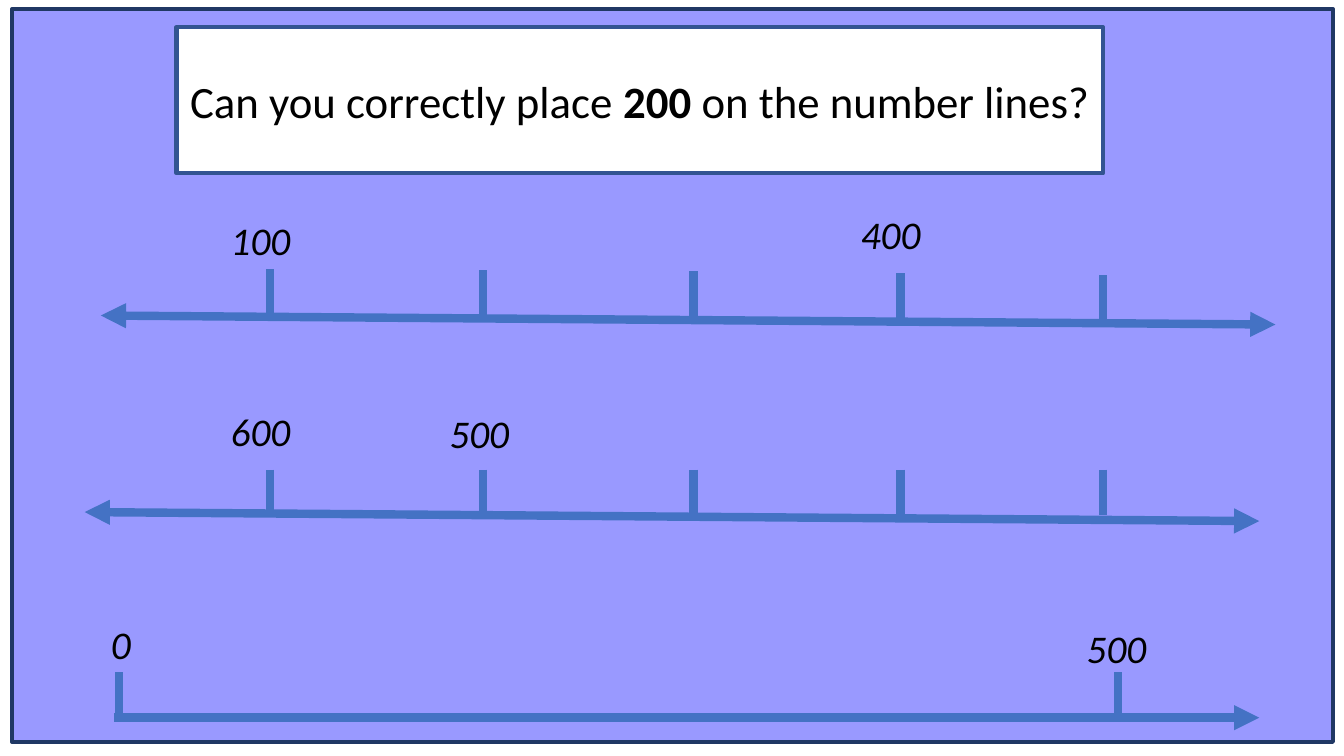
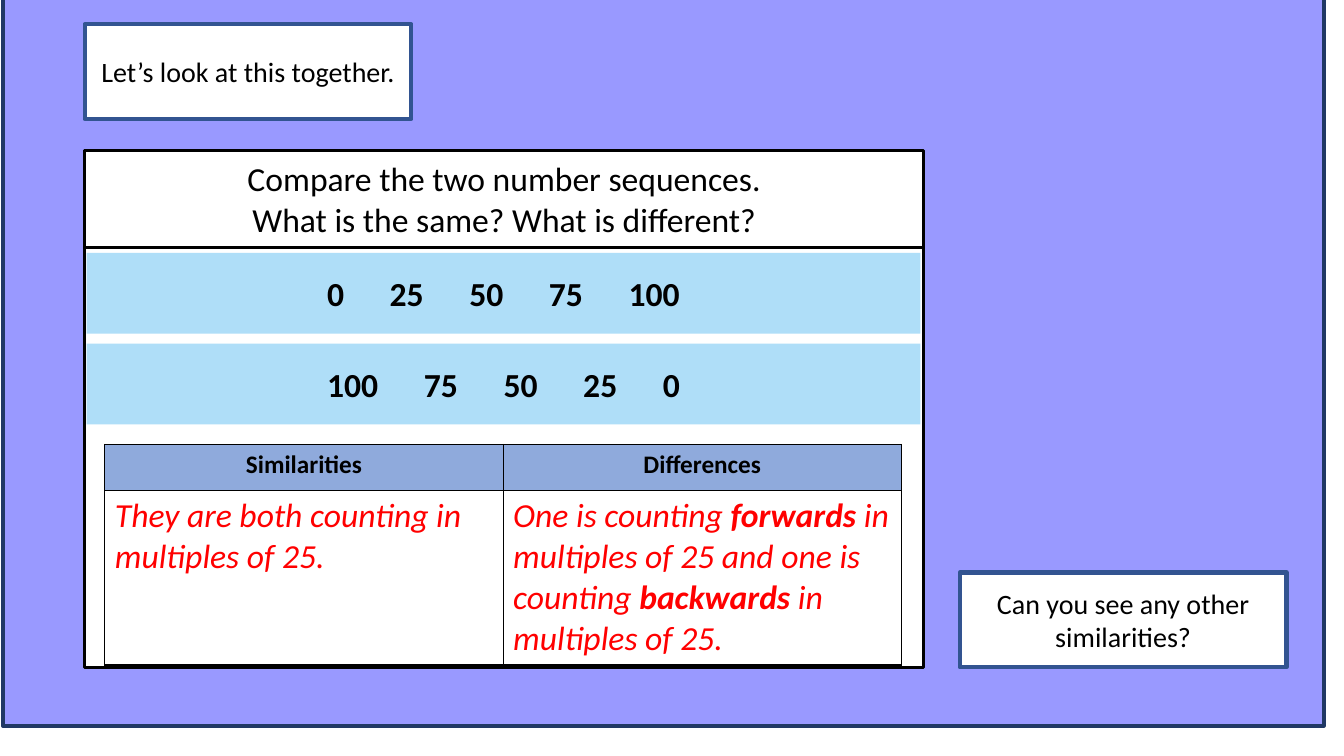
from lxml import etree
from pptx import Presentation
from pptx.dml.color import RGBColor
from pptx.enum.shapes import MSO_CONNECTOR, MSO_SHAPE
from pptx.enum.text import MSO_ANCHOR, PP_ALIGN
from pptx.oxml.ns import qn
from pptx.util import Inches, Pt

RECT = MSO_SHAPE.RECTANGLE
STRAIGHT = MSO_CONNECTOR.STRAIGHT
LEFT, CENTER = PP_ALIGN.LEFT, PP_ALIGN.CENTER
TOP, MIDDLE = MSO_ANCHOR.TOP, MSO_ANCHOR.MIDDLE

FONT = "Calibri"
COLORS = {
    "panel": "9999FF", "panel_edge": "203864", "box_edge": "325491",
    "axis": "4472C4", "band": "AFDEF8", "header": "8FAADC",
    "white": "FFFFFF", "black": "000000", "answer": "FF0000",
}

QUESTION = [("Can you correctly place ", False), ("200 ", True),
            ("on the number lines?", False)]
TICK_XS = [2.68, 4.79, 6.88, 8.93, 10.94]
TICK_HEIGHT = 0.45
NUMBER_LINES = [
    {"axis": (1, 3.13, 12.65, 3.22), "both_ends": True,
     "ticks": list(zip(TICK_XS, [2.67, 2.68, 2.69, 2.71, 2.73])),
     "labels": [("100", 2.19, 2.1), ("400", 8.44, 2.04)]},
    {"axis": (0.84, 5.08, 12.49, 5.17), "both_ends": True,
     "ticks": [(x, 4.66) for x in TICK_XS],
     "labels": [("600", 2.19, 3.99), ("500", 4.36, 4.01)]},
    {"axis": (1.13, 7.12, 12.49, 7.12), "both_ends": False,
     "ticks": [(1.18, 6.67), (11.09, 6.67)],
     "labels": [("0", 1, 6.1), ("500", 10.68, 6.14)]},
]

PROMPTS = [("Let’s look at this together.", 0.84, 0.24),
           ("Can you see any other similarities?", 9.52, 5.68)]
TASK = ["Compare the two number sequences.",
        "What is the same? What is different?"]
SEQUENCES = [["0", "25", "50", "75", "100"], ["100", "75", "50", "25", "0"]]
BAND_LEFT, BAND_TOP, BAND_WIDTH, BAND_HEIGHT, BAND_STEP = 0.86, 2.51, 8.27, 0.8, 0.9
DIGIT_WIDTH, NUMBER_GAP = 0.17, 0.45
HEADERS = ["Similarities", "Differences"]
ANSWERS = [
    [("They are both counting in multiples of 25.", False)],
    [("One is counting ", False), ("forwards", True),
     (" in multiples of 25 and one is counting ", False),
     ("backwards", True), (" in multiples of 25.", False)],
]
TABLE_AT = (1.04, 4.41, 7.9, 2.16)
ROW_HEIGHTS = [0.46, 1.7]


def rgb(name):
    return RGBColor.from_string(COLORS[name])


def write(tf, paragraphs, size, color="black", align=CENTER, bold=False, italic=False):
    for i, runs in enumerate(paragraphs):
        p = tf.add_paragraph() if i else tf.paragraphs[0]
        p.alignment = align
        p.font.name = FONT
        p.font.size = Pt(size)
        p.font.italic = italic
        p.font.bold = bold
        p.font.color.rgb = rgb(color)
        for text, strong in runs:
            r = p.add_run()
            r.text = text
            if strong:
                r.font.bold = True


def plain(text):
    return [(text, False)]


def add_box(s, at, fill="white", edge=None, width=3, anchor=MIDDLE):
    sp = s.shapes.add_shape(RECT, *map(Inches, at))
    sp.shadow.inherit = False
    sp.fill.solid()
    sp.fill.fore_color.rgb = rgb(fill)
    if edge:
        sp.line.color.rgb = rgb(edge)
        sp.line.width = Pt(width)
    else:
        sp.line.fill.background()
    sp.text_frame.word_wrap = True
    sp.text_frame.vertical_anchor = anchor
    return sp


def add_panel(prs, left, top):
    s = prs.slides.add_slide(prs.slide_layouts[6])
    add_box(s, (left, top, 13.1, 7.27), "panel", "panel_edge")
    return s


def add_line(s, ends, arrows=()):
    sp = s.shapes.add_connector(STRAIGHT, *map(Inches, ends))
    sp.line.color.rgb = rgb("axis")
    sp.line.width = Pt(6)
    for end in arrows:
        etree.SubElement(sp.line._get_or_add_ln(), qn("a:" + end), type="triangle")
    etree.SubElement(sp._element.spPr, qn("a:effectLst"))


def add_number_line(s, axis, both_ends, ticks, labels):
    for x, y in ticks:
        add_line(s, (x, y, x, y + TICK_HEIGHT))
    for text, x, y in labels:
        tf = s.shapes.add_textbox(*map(Inches, (x, y, 1.81, 0.57))).text_frame
        tf.word_wrap = True
        write(tf, [plain(text)], 28, align=LEFT, italic=True)
    add_line(s, axis, ("headEnd", "tailEnd") if both_ends else ("tailEnd",))


def add_sequence(s, numbers, top):
    sp = add_box(s, (BAND_LEFT, top, BAND_WIDTH, BAND_HEIGHT), "band")
    tf = sp.text_frame
    total = sum(map(len, numbers)) * DIGIT_WIDTH + NUMBER_GAP * (len(numbers) - 1)
    tf.margin_left = Inches((BAND_WIDTH - total) / 2)
    write(tf, [plain("\t".join(numbers))], 24, align=LEFT, bold=True)
    tabs = etree.Element(qn("a:tabLst"))
    x = 0
    for number in numbers[:-1]:
        x += len(number) * DIGIT_WIDTH + NUMBER_GAP
        etree.SubElement(tabs, qn("a:tab"), pos=str(Inches(x)), algn="l")
    tf.paragraphs[0]._p.get_or_add_pPr().insert(0, tabs)


def style_cell(cell, fill):
    tcPr = cell._tc.get_or_add_tcPr()
    for side in ("lnL", "lnR", "lnT", "lnB"):
        ln = etree.SubElement(tcPr, qn("a:" + side), w=str(Pt(1)))
        solid = etree.SubElement(ln, qn("a:solidFill"))
        etree.SubElement(solid, qn("a:srgbClr"), val=COLORS["black"])
    cell.fill.solid()
    cell.fill.fore_color.rgb = rgb(fill)


def add_comparison(s):
    table = s.shapes.add_table(2, len(HEADERS), *map(Inches, TABLE_AT)).table
    table.first_row = table.horz_banding = False
    for row, height in zip(table.rows, ROW_HEIGHTS):
        row.height = Inches(height)
    for col, (header, answer) in enumerate(zip(HEADERS, ANSWERS)):
        head, body = table.cell(0, col), table.cell(1, col)
        style_cell(head, "header")
        style_cell(body, "white")
        write(head.text_frame, [plain(header)], 18, bold=True)
        write(body.text_frame, [answer], 24, "answer", LEFT, italic=True)


def build_number_lines(prs):
    s = add_panel(prs, 0.12, 0.09)
    sp = add_box(s, (1.75, 0.27, 9.19, 1.45), edge="box_edge")
    write(sp.text_frame, [QUESTION], 32)
    for number_line in NUMBER_LINES:
        add_number_line(s, **number_line)


def build_sequences(prs):
    s = add_panel(prs, 0.03, -0.07)
    add_box(s, (0.84, 1.95, 8.32, 4.67), edge="black", width=2.25)
    sp = add_box(s, (0.84, 1.49, 8.32, 0.97), edge="black", width=2.25, anchor=TOP)
    sp.text_frame.margin_top = sp.text_frame.margin_bottom = Inches(0.08)
    write(sp.text_frame, [plain(text) for text in TASK], 24)
    for i, numbers in enumerate(SEQUENCES):
        add_sequence(s, numbers, BAND_TOP + i * BAND_STEP)
    add_comparison(s)
    for text, left, top in PROMPTS:
        sp = add_box(s, (left, top, 3.24, 0.94), edge="box_edge")
        write(sp.text_frame, [plain(text)], 20)


def main():
    prs = Presentation()
    prs.slide_width, prs.slide_height = Inches(13.33), Inches(7.5)
    build_number_lines(prs)
    build_sequences(prs)
    prs.save("out.pptx")


if __name__ == "__main__":
    main()
